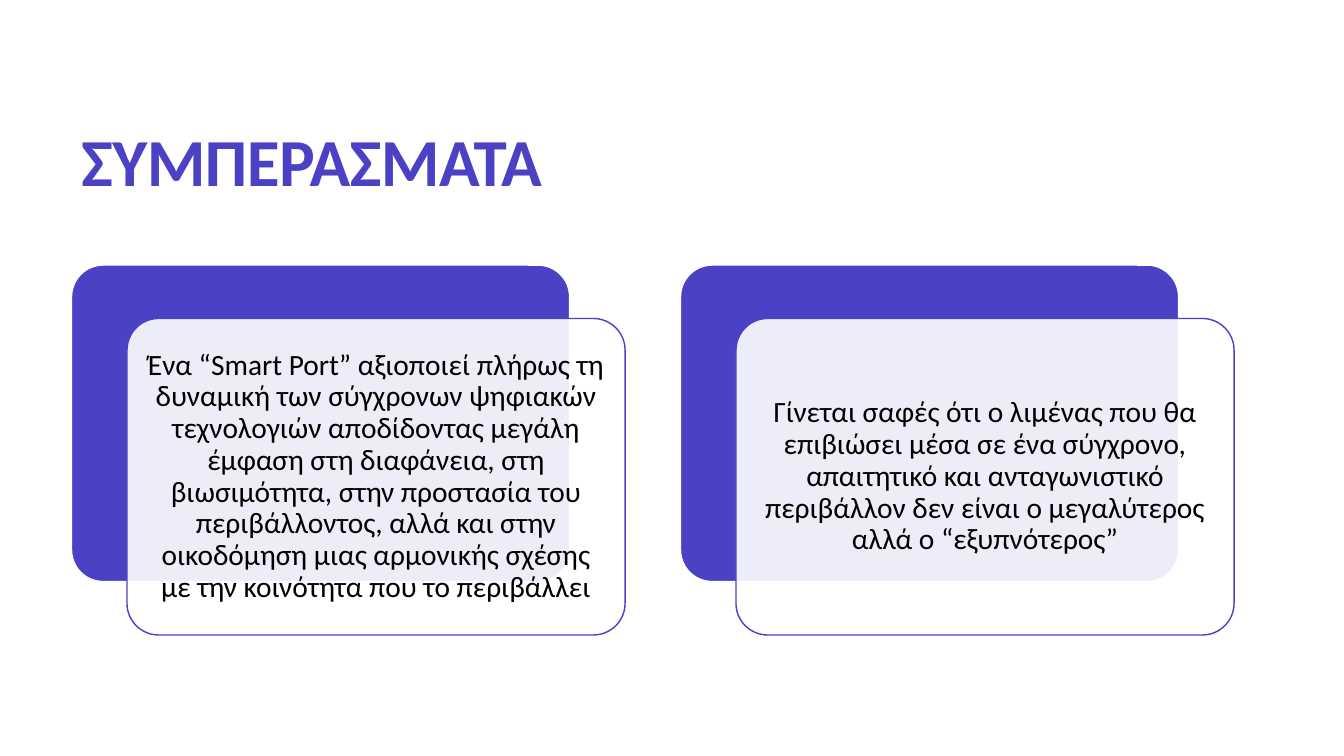
from lxml import etree
from pptx import Presentation
from pptx.dml.color import RGBColor
from pptx.enum.shapes import MSO_SHAPE
from pptx.enum.text import MSO_ANCHOR, PP_ALIGN
from pptx.oxml.ns import qn
from pptx.util import Inches, Pt

INDIGO = RGBColor(0x4A, 0x41, 0xC5)
WHITE = RGBColor(0xFF, 0xFF, 0xFF)
BLACK = RGBColor(0x00, 0x00, 0x00)
FONT = "Calibri"

CARD_WIDTH, CARD_HEIGHT = 4.94, 3.14
CARD_LEFT, CARD_TOP, CARD_STEP = 0.71, 2.63, 6.04
FRONT_SHIFT_X, FRONT_SHIFT_Y = 0.55, 0.53

CONCLUSIONS = [
    "Ένα “Smart Port” αξιοποιεί πλήρως τη δυναμική των σύγχρονων ψηφιακών "
    "τεχνολογιών αποδίδοντας μεγάλη έμφαση στη διαφάνεια, στη βιωσιμότητα, "
    "στην προστασία του περιβάλλοντος, αλλά και στην οικοδόμηση μιας "
    "αρμονικής σχέσης με την κοινότητα που το περιβάλλει",
    "Γίνεται σαφές ότι ο λιμένας που θα επιβιώσει μέσα σε ένα σύγχρονο, "
    "απαιτητικό και ανταγωνιστικό περιβάλλον δεν είναι ο μεγαλύτερος "
    "αλλά ο “εξυπνότερος”",
]


def write_text(frame, text, size, color, align, anchor, bold=False):
    frame.word_wrap = True
    frame.vertical_anchor = anchor
    paragraph = frame.paragraphs[0]
    paragraph.alignment = align
    paragraph.line_spacing = 0.9
    span = paragraph.add_run()
    span.text = text
    span.font.name = FONT
    span.font.size = Pt(size)
    span.font.bold = bold
    span.font.color.rgb = color
    return span


def add_title(page, text):
    box = page.shapes.add_textbox(Inches(0.71), Inches(0.4), Inches(11.54), Inches(1.64))
    span = write_text(box.text_frame, text, 48, INDIGO, PP_ALIGN.LEFT,
                      MSO_ANCHOR.BOTTOM, bold=True)
    span.font._element.set("spc", "-40")


def add_card(page, left, top, fill, line):
    card = page.shapes.add_shape(MSO_SHAPE.ROUNDED_RECTANGLE, Inches(left), Inches(top),
                                 Inches(CARD_WIDTH), Inches(CARD_HEIGHT))
    card.adjustments[0] = 0.1
    card.shadow.inherit = False
    card.fill.solid()
    card.fill.fore_color.rgb = fill
    card.line.color.rgb = line
    card.line.width = Pt(1)
    return card


def set_opacity(shape, percent):
    color = shape.fill._xPr.find(qn("a:solidFill"))[0]
    etree.SubElement(color, qn("a:alpha")).set("val", str(percent * 1000))


def add_conclusion(page, left, text):
    """Draw a solid card with a translucent text card overlapping it."""
    add_card(page, left, CARD_TOP, INDIGO, WHITE)
    front = add_card(page, left + FRONT_SHIFT_X, CARD_TOP + FRONT_SHIFT_Y, WHITE, INDIGO)
    set_opacity(front, 90)
    frame = front.text_frame
    frame.margin_left = frame.margin_right = Inches(0.09)
    frame.margin_top = frame.margin_bottom = Inches(0.09)
    write_text(frame, text, 21, BLACK, PP_ALIGN.CENTER, MSO_ANCHOR.MIDDLE)


def main():
    deck = Presentation()
    deck.slide_width, deck.slide_height = Inches(13.33), Inches(7.5)
    page = deck.slides.add_slide(deck.slide_layouts[6])
    add_title(page, "ΣΥΜΠΕΡΑΣΜΑΤΑ")
    for index, text in enumerate(CONCLUSIONS):
        add_conclusion(page, CARD_LEFT + index * CARD_STEP, text)
    deck.save("out.pptx")


if __name__ == "__main__":
    main()
